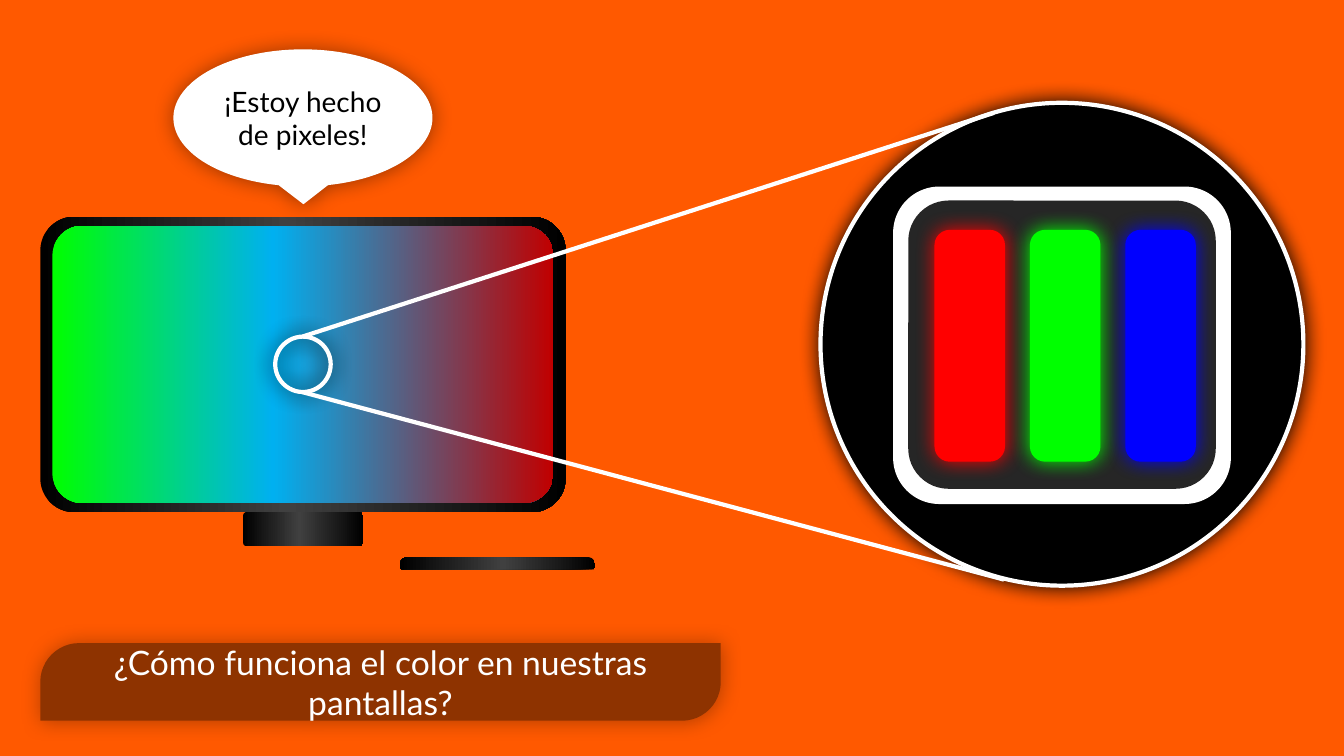
from copy import deepcopy

from lxml.etree import SubElement
from pptx import Presentation
from pptx.dml.color import RGBColor
from pptx.enum.shapes import MSO_CONNECTOR, MSO_SHAPE
from pptx.enum.text import MSO_ANCHOR, PP_ALIGN
from pptx.oxml.ns import qn
from pptx.util import Inches, Pt

WIDTH, HEIGHT = Inches(13.33), Inches(7.5)
FONT = "Lato"

ORANGE = RGBColor(0xFF, 0x59, 0x00)
BROWN = RGBColor(0x8E, 0x33, 0x00)
BLACK = RGBColor(0x00, 0x00, 0x00)
CHARCOAL = RGBColor(0x26, 0x26, 0x26)
GRAY = RGBColor(0x40, 0x40, 0x40)
WHITE = RGBColor(0xFF, 0xFF, 0xFF)
RED = RGBColor(0xFF, 0x00, 0x00)
GREEN = RGBColor(0x00, 0xFF, 0x00)
BLUE = RGBColor(0x00, 0x00, 0xFF)
SKY = RGBColor(0x00, 0xB0, 0xF0)
DARK_RED = RGBColor(0xC0, 0x00, 0x00)

CASING = [(0, BLACK), (0.47, GRAY), (1, BLACK)]
SPECTRUM = [(0, GREEN), (0.44, SKY), (1, DARK_RED)]


def across(share):
    return round(WIDTH * share / 100)


def down(share):
    return round(HEIGHT * share / 100)


def paint_gradient(sp, stops):
    sp.fill.gradient()
    sp.fill.gradient_angle = 0
    gs_list = sp._element.spPr.find(qn("a:gradFill")).find(qn("a:gsLst"))
    while len(gs_list) < len(stops):
        gs_list.append(deepcopy(gs_list[0]))
    for stop, (position, color) in zip(sp.fill.gradient_stops, stops):
        stop.position = position
        stop.color.rgb = color


def add_glow(sp, color, opacity):
    effects = sp._element.spPr.find(qn("a:effectLst"))
    shadow = SubElement(effects, qn("a:outerShdw"), blurRad=str(Pt(15)),
                        dist="0", dir="0", algn="ctr", rotWithShape="0")
    clr = SubElement(shadow, qn("a:srgbClr"), val=str(color))
    SubElement(clr, qn("a:alpha"), val=str(opacity * 1000))


def add_block(s, kind, x, y, w, h, fill=None, adj=(), outline=None,
              glow=None, rotation=0):
    sp = s.shapes.add_shape(kind, across(x), down(y), across(w), down(h))
    for i, value in enumerate(adj):
        sp.adjustments[i] = value
    sp.rotation = rotation
    if fill is None:
        sp.fill.background()
    elif isinstance(fill, list):
        paint_gradient(sp, fill)
    else:
        sp.fill.solid()
        sp.fill.fore_color.rgb = fill
    if outline is None:
        sp.line.fill.background()
    else:
        sp.line.color.rgb = outline
        sp.line.width = Pt(3)
    sp.shadow.inherit = False
    if glow:
        add_glow(sp, *glow)
    return sp


def write(sp, text, size=20, color=BLACK, align=PP_ALIGN.CENTER):
    tf = sp.text_frame
    tf.word_wrap = True
    tf.vertical_anchor = MSO_ANCHOR.MIDDLE
    p = tf.paragraphs[0]
    p.alignment = align
    r = p.add_run()
    r.text = text
    r.font.name = FONT
    r.font.size = Pt(size)
    r.font.color.rgb = color


def add_ray(s, x1, y1, x2, y2):
    ray = s.shapes.add_connector(MSO_CONNECTOR.STRAIGHT, across(x1), down(y1),
                                 across(x2), down(y2))
    ray.line.color.rgb = WHITE
    ray.line.width = Pt(3)
    SubElement(ray._element.spPr, qn("a:effectLst"))


def add_monitor(s):
    rounded = MSO_SHAPE.ROUNDED_RECTANGLE
    add_block(s, MSO_SHAPE.ROUND_2_SAME_RECTANGLE, 29.78, 73.73, 14.48, 1.6,
              CASING, adj=(0.167, 0.5), rotation=180)
    add_block(s, rounded, 18.08, 67.73, 8.93, 4.53, CASING, adj=(0.114,))
    add_block(s, rounded, 3, 28.67, 39.08, 39.07, CASING, adj=(0.114,))
    add_block(s, rounded, 3.9, 29.87, 37.28, 36.67, SPECTRUM, adj=(0.108,))


def add_pixel(s):
    rounded = MSO_SHAPE.ROUNDED_RECTANGLE
    add_block(s, rounded, 66.45, 24.67, 25.13, 42, WHITE, adj=(0.146,))
    add_block(s, rounded, 67.58, 26.53, 22.88, 38.13, CHARCOAL, adj=(0.14,))
    for i, color in enumerate((RED, GREEN, BLUE)):
        add_block(s, rounded, 69.53 + 7.1 * i, 30.4, 5.25, 30.67, color,
                  adj=(0.216,), glow=(color, 100))


def main():
    prs = Presentation()
    prs.slide_width, prs.slide_height = WIDTH, HEIGHT
    s = prs.slides.add_slide(prs.slide_layouts[6])
    s.background.fill.solid()
    s.background.fill.fore_color.rgb = ORANGE

    add_block(s, MSO_SHAPE.OVAL, 61.05, 13.6, 35.93, 63.87, BLACK,
              outline=WHITE, glow=(BLACK, 100))
    add_monitor(s)
    bubble = add_block(s, MSO_SHAPE.OVAL_CALLOUT, 12.9, 6.53, 19.28, 18.13,
                       WHITE, adj=(0.002, 0.63), glow=(BLACK, 40))
    write(bubble, "¡Estoy hecho de pixeles!")
    add_pixel(s)
    add_block(s, MSO_SHAPE.OVAL, 20.48, 44.53, 4.13, 7.33, outline=WHITE,
              glow=(BLACK, 100))
    add_ray(s, 22.5, 44.53, 73.95, 14.93)
    add_ray(s, 22.5, 51.87, 74.7, 76.67)
    banner = add_block(s, MSO_SHAPE.ROUND_2_DIAG_RECTANGLE, 3, 85.07, 50.63,
                       10.27, BROWN, adj=(0.5, 0), glow=(BLACK, 30))
    write(banner, "¿Cómo funciona el color en nuestras pantallas?",
          size=24, color=WHITE)
    prs.save("out.pptx")


if __name__ == "__main__":
    main()
